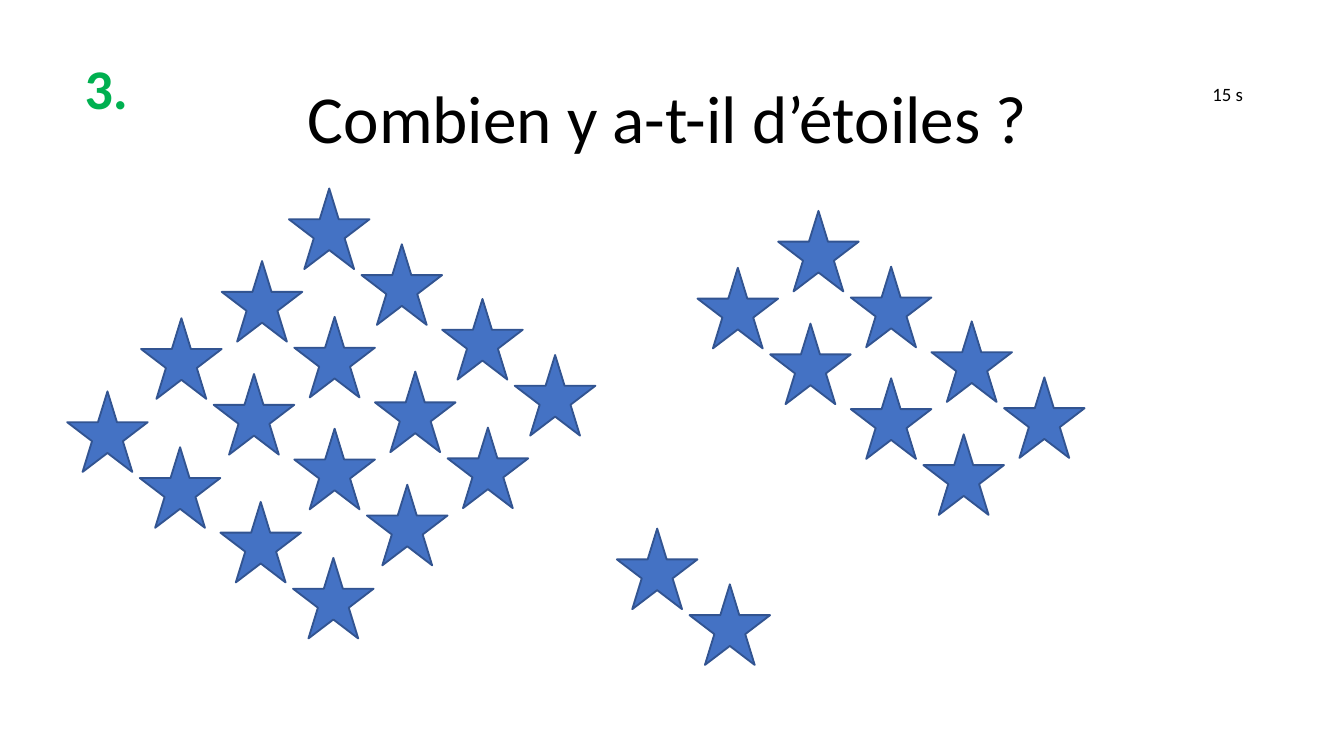
from pptx import Presentation
from pptx.dml.color import RGBColor
from pptx.enum.shapes import MSO_SHAPE
from pptx.enum.text import MSO_ANCHOR, MSO_AUTO_SIZE, PP_ALIGN
from pptx.util import Pt

BLACK = RGBColor(0x00, 0x00, 0x00)
GREEN = RGBColor(0x00, 0xB0, 0x50)
STAR_BLUE = RGBColor(0x44, 0x72, 0xC4)
STAR_EDGE = RGBColor(0x32, 0x54, 0x91)

STAR_SIZE = 43.2
DIAGONAL_STEPS = [(0, 0), (38.9, 29.9), (82.1, 59.2), (121, 89.2)]
DIAGONALS = [
    (118.8, 139.9, 4),
    (75.6, 170.5, 4),
    (36, 209.7, 4),
    (416.9, 113, 4),
    (373.7, 143.5, 4),
    (330.5, 283.2, 2),
    (154.8, 101, 4),
]


def place(shape, left, top, width, height):
    shape.left, shape.top = Pt(left), Pt(top)
    shape.width, shape.height = Pt(width), Pt(height)


def write(shape, text, size, color, bold=False, wrap=True):
    frame = shape.text_frame
    frame.text = text
    frame.word_wrap = wrap
    frame.auto_size = MSO_AUTO_SIZE.NONE
    frame.vertical_anchor = MSO_ANCHOR.TOP
    paragraph = frame.paragraphs[0]
    paragraph.alignment = PP_ALIGN.LEFT
    font = paragraph.runs[0].font
    font.name, font.size, font.bold = "Calibri", Pt(size), bold
    font.color.rgb = color


def add_label(slide, box, text, size, color, bold=False, wrap=True):
    label = slide.shapes.add_textbox(*map(Pt, box))
    write(label, text, size, color, bold, wrap)


def add_star(slide, left, top):
    star = slide.shapes.add_shape(
        MSO_SHAPE.STAR_5_POINT, Pt(left), Pt(top), Pt(STAR_SIZE), Pt(STAR_SIZE)
    )
    star.shadow.inherit = False
    star.fill.solid()
    star.fill.fore_color.rgb = STAR_BLUE
    star.line.color.rgb = STAR_EDGE
    star.line.width = Pt(1)


def add_diagonal(slide, left, top, count):
    for right, down in DIAGONAL_STEPS[:count]:
        add_star(slide, left + right, top + down)


def main():
    deck = Presentation()
    deck.slide_width, deck.slide_height = Pt(720), Pt(405)
    slide = deck.slides.add_slide(deck.slide_layouts[5])

    question = slide.shapes.title
    place(question, 157.7, 37.4, 467.3, 51.1)
    write(question, "Combien y a-t-il d’étoiles ?", 36, BLACK)

    add_label(slide, (38.2, 25.2, 38.2, 43.9), "3.", 30, GREEN, bold=True, wrap=False)
    add_label(slide, (640.1, 41, 41.8, 19.4), " 15 s", 10.1, BLACK)

    for left, top, count in DIAGONALS:
        add_diagonal(slide, left, top, count)

    deck.save("out.pptx")


if __name__ == "__main__":
    main()
